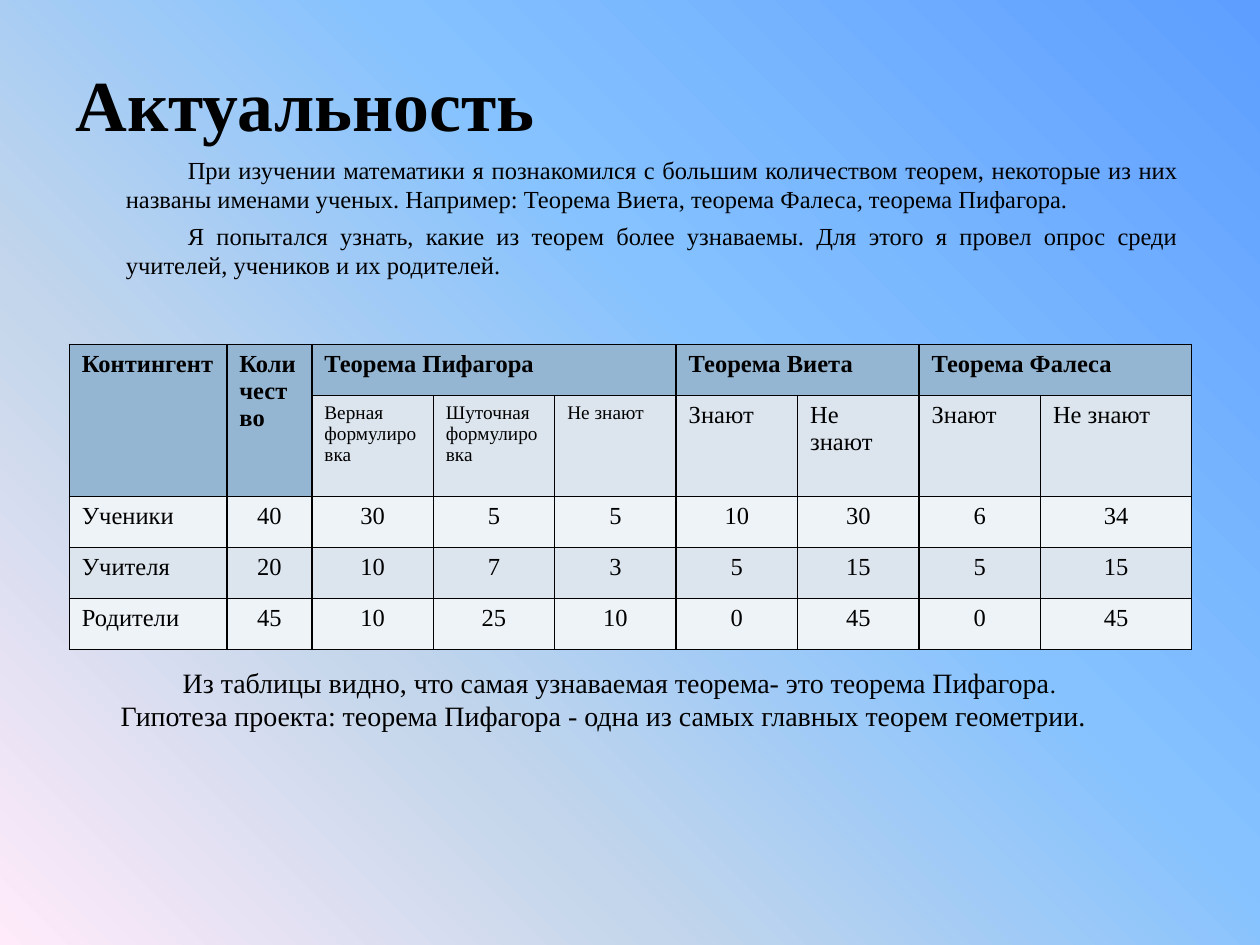
from dataclasses import dataclass
from lxml.etree import SubElement
from pptx import Presentation
from pptx.dml.color import RGBColor
from pptx.enum.text import MSO_ANCHOR as Anchor, PP_ALIGN as Align
from pptx.oxml.ns import qn
from pptx.util import Pt

FONT = "Times New Roman"
BLACK = RGBColor(0x00, 0x00, 0x00)
HEADER_BLUE = RGBColor(0x94, 0xB6, 0xD2)
BAND_BLUE = RGBColor(0xDC, 0xE5, 0xEE)
BAND_PALE = RGBColor(0xEE, 0xF3, 0xF7)
GRADIENT = [
    (0, RGBColor(0x5E, 0x9E, 0xFF)),
    (40, RGBColor(0x85, 0xC2, 0xFF)),
    (70, RGBColor(0xC4, 0xD6, 0xEB)),
    (100, RGBColor(0xFF, 0xEB, 0xFA)),
]


@dataclass
class Box:
    left: float
    top: float
    width: float
    height: float

    def lengths(self):
        return Pt(self.left), Pt(self.top), Pt(self.width), Pt(self.height)


@dataclass
class HeaderGroup:
    text: str
    column: int
    row_span: int
    column_span: int


TITLE_BOX = Box(36, 21.6, 648, 74.2)
BODY_BOX = Box(36, 85, 644.4, 388)
TABLE_BOX = Box(39.6, 196.8, 641.4, 170.4)
CONCLUSION_BOX = Box(61.9, 376.6, 607.7, 63.4)

COLUMN_WIDTHS = [90, 48.6] + [69.4] * 6 + [86.4]
ROW_HEIGHTS = [29.2, 53.6] + [29.2] * 3
HEADER_GROUPS = [
    HeaderGroup("Контингент", 0, 2, 1),
    HeaderGroup("Количество", 1, 2, 1),
    HeaderGroup("Теорема Пифагора", 2, 1, 3),
    HeaderGroup("Теорема Виета", 5, 1, 2),
    HeaderGroup("Теорема Фалеса", 7, 1, 2),
]
SUBHEADERS = ["Верная формулировка", "Шуточная формулировка", "Не знают",
              "Знают", "Не знают", "Знают", "Не знают"]
SURVEY = [
    ("Ученики", 40, 30, 5, 5, 10, 30, 6, 34),
    ("Учителя", 20, 10, 7, 3, 5, 15, 5, 15),
    ("Родители", 45, 10, 25, 10, 0, 45, 0, 45),
]


def write_text(frame, paragraphs, *, size=14, bold=False, align=Align.LEFT,
               anchor=Anchor.TOP, margin=0, indent=0, gap=0):
    """Fill a frame; each paragraph is a string or a list of (text, size) runs."""
    frame.word_wrap = True
    frame.vertical_anchor = anchor
    for index, content in enumerate(paragraphs):
        paragraph = frame.add_paragraph() if index else frame.paragraphs[0]
        paragraph.alignment = align
        paragraph.space_before = Pt(gap if index else 0)
        properties = paragraph._p.get_or_add_pPr()
        properties.set("marL", str(Pt(margin)))
        properties.set("indent", str(Pt(indent)))
        runs = [(content, size)] if isinstance(content, str) else content
        for text, run_size in runs:
            run = paragraph.add_run()
            run.text = text
            run.font.name = FONT
            run.font.size = Pt(run_size)
            run.font.bold = bold
            run.font.color.rgb = BLACK


def add_text(slide, box: Box, paragraphs, **text_format):
    shape = slide.shapes.add_textbox(*box.lengths())
    write_text(shape.text_frame, paragraphs, **text_format)


def set_background(slide):
    fill = slide.background.fill
    fill.gradient()
    fill.gradient_angle = 225
    stops = slide.element.find(".//" + qn("a:gsLst"))
    for stop in list(stops):
        stops.remove(stop)
    for position, color in GRADIENT:
        stop = SubElement(stops, qn("a:gs"), pos=str(position * 1000))
        SubElement(stop, qn("a:srgbClr"), val=str(color))


def style_cell(cell, color: RGBColor):
    properties = cell._tc.get_or_add_tcPr()
    for side in ("a:lnL", "a:lnR", "a:lnT", "a:lnB"):
        line = SubElement(properties, qn(side), w=str(Pt(1)))
        line_fill = SubElement(line, qn("a:solidFill"))
        SubElement(line_fill, qn("a:srgbClr"), val=str(BLACK))
    cell.fill.solid()
    cell.fill.fore_color.rgb = color


def add_survey_table(slide, box: Box):
    table = slide.shapes.add_table(
        len(ROW_HEIGHTS), len(COLUMN_WIDTHS), *box.lengths()).table
    for column, width in zip(table.columns, COLUMN_WIDTHS):
        column.width = Pt(width)
    for row, height in zip(table.rows, ROW_HEIGHTS):
        row.height = Pt(height)

    # Fills and borders
    for row_index in range(len(ROW_HEIGHTS)):
        for column_index in range(len(COLUMN_WIDTHS)):
            color = BAND_BLUE if row_index % 2 else BAND_PALE
            if row_index == 0 or (row_index == 1 and column_index < 2):
                color = HEADER_BLUE
            style_cell(table.cell(row_index, column_index), color)

    # Two header rows
    for group in HEADER_GROUPS:
        cell = table.cell(0, group.column)
        cell.merge(table.cell(group.row_span - 1,
                              group.column + group.column_span - 1))
        write_text(cell.text_frame, [group.text], bold=True)
    for column_index, text in enumerate(SUBHEADERS, start=2):
        write_text(table.cell(1, column_index).text_frame, [text],
                   size=11 if column_index < 5 else 14)

    # Survey results
    for row_index, values in enumerate(SURVEY, start=2):
        for column_index, value in enumerate(values):
            write_text(table.cell(row_index, column_index).text_frame,
                       [str(value)],
                       align=Align.CENTER if column_index else Align.LEFT)


def main():
    presentation = Presentation()
    presentation.slide_width = Pt(720)
    presentation.slide_height = Pt(540)
    slide = presentation.slides.add_slide(presentation.slide_layouts[6])
    set_background(slide)

    # Introduction and title
    add_text(slide, BODY_BOX, [
        "При изучении математики я познакомился с большим количеством теорем, "
        "некоторые из них названы именами ученых. Например: Теорема Виета, "
        "теорема Фалеса, теорема Пифагора.",
        "Я попытался узнать, какие из теорем более узнаваемы. Для этого я "
        "провел опрос среди учителей, учеников и их родителей.",
    ], align=Align.JUSTIFY, margin=28.8, indent=35.4, gap=4)
    add_text(slide, TITLE_BOX, ["Актуальность"], size=41, bold=True,
             anchor=Anchor.MIDDLE)

    add_survey_table(slide, TABLE_BOX)

    # Conclusion
    add_text(slide, CONCLUSION_BOX, [[
        ("Из таблицы видно, что самая узнаваемая теорема- это теорема Пифагора", 16),
        (". ", 14),
        ("Гипотеза проекта: теорема Пифагора - одна из самых главных теорем "
         "геометрии.", 16),
    ]], indent=35.4)

    presentation.save("out.pptx")


if __name__ == "__main__":
    main()
